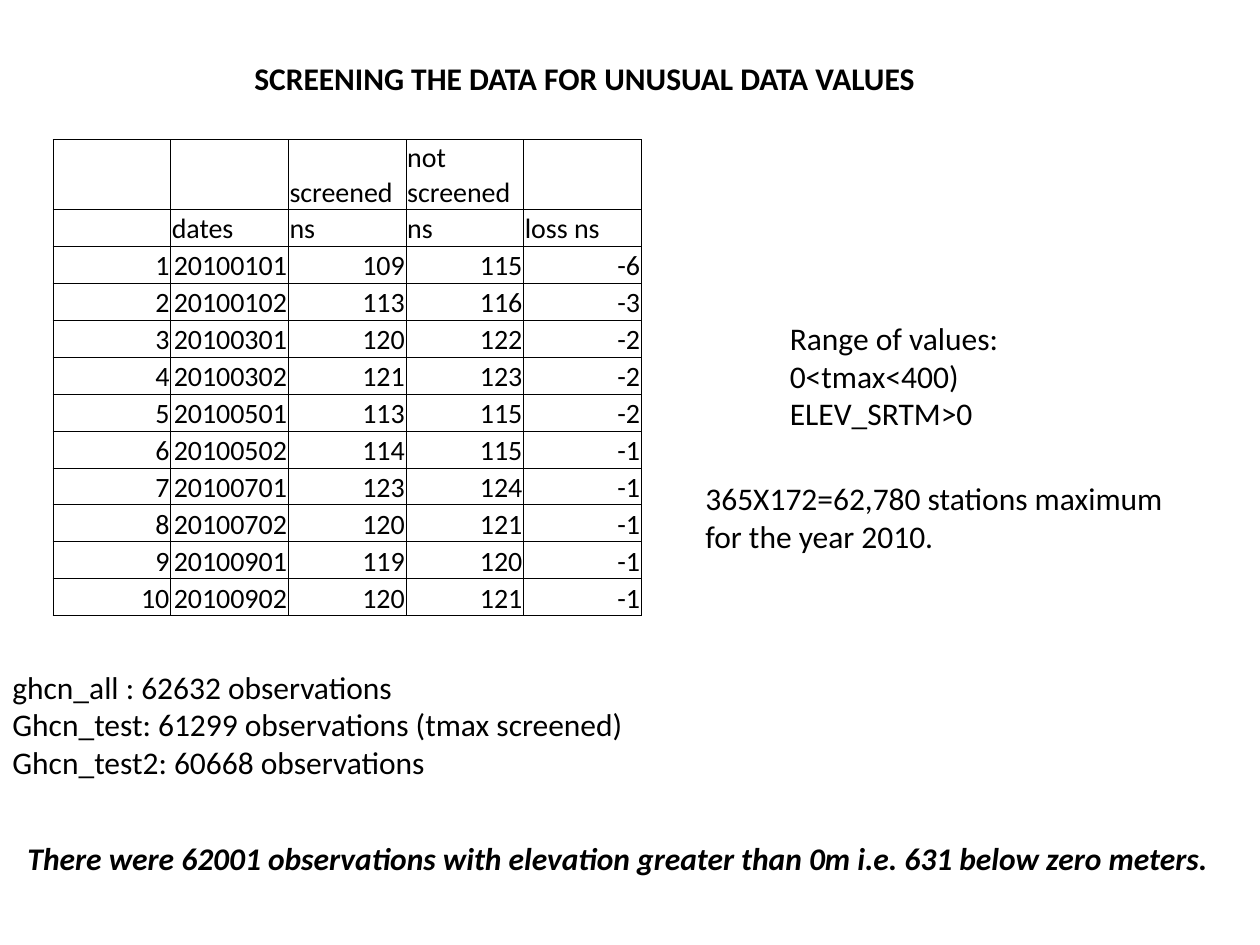
import pptx
import pptx.util
import pptx.dml.color
import pptx.enum.text
import pptx.oxml.ns
import lxml.etree as etree

COLORS = {"text": "000000", "border": "000000"}
FONT = "Calibri"
ANCHOR = pptx.enum.text.MSO_ANCHOR
ALIGN = pptx.enum.text.PP_ALIGN
qn = pptx.oxml.ns.qn

prs = pptx.Presentation()
prs.slide_width = pptx.util.Inches(10)
prs.slide_height = pptx.util.Inches(7.5)
W, H = prs.slide_width, prs.slide_height
s = prs.slides.add_slide(prs.slide_layouts[6])


def write(tf, text, size=18, bold=False, italic=False, align=ALIGN.LEFT):
    tf.word_wrap = True
    for i, line in enumerate(text.split("\n")):
        p = tf.paragraphs[0] if i == 0 else tf.add_paragraph()
        p.alignment = align
        if not line:
            etree.SubElement(p._p, qn("a:endParaRPr"), sz=str(size * 100))
            continue
        r = p.add_run()
        r.text = line
        r.font.name = FONT
        r.font.size = pptx.util.Pt(size)
        r.font.bold = bold
        r.font.italic = italic
        r.font.color.rgb = pptx.dml.color.RGBColor.from_string(COLORS["text"])


def outline(cell):
    tcPr = cell._tc.get_or_add_tcPr()
    for i, side in enumerate(("lnL", "lnR", "lnT", "lnB")):
        ln = etree.Element(qn(f"a:{side}"), w=str(pptx.util.Pt(0.5)))
        fill = etree.SubElement(ln, qn("a:solidFill"))
        etree.SubElement(fill, qn("a:srgbClr"), val=COLORS["border"])
        tcPr.insert(i, ln)


counts = [
    ("20100101", 109, 115),
    ("20100102", 113, 116),
    ("20100301", 120, 122),
    ("20100302", 121, 123),
    ("20100501", 113, 115),
    ("20100502", 114, 115),
    ("20100701", 123, 124),
    ("20100702", 120, 121),
    ("20100901", 119, 120),
    ("20100902", 120, 121),
]
headers = [("", "", "screened", "not screened", ""),
           ("", "dates", "ns", "ns", "loss ns")]
rows = headers + [(n, date, kept, total, kept - total)
                  for n, (date, kept, total) in enumerate(counts, 1)]

table_w, table_h = int(0.467 * W), int(0.501 * H)
head_h = int(0.071 * H)
table = s.shapes.add_table(len(rows), len(rows[0]), int(0.042 * W),
                           int(0.148 * H), table_w, table_h).table
table.first_row = False
table.horz_banding = False
for col in table.columns:
    col.width = table_w // len(rows[0])
for i, row in enumerate(table.rows):
    row.height = head_h if i == 0 else (table_h - head_h) // (len(rows) - 1)

for i, values in enumerate(rows):
    for j, value in enumerate(values):
        cell = table.cell(i, j)
        cell.fill.background()
        cell.vertical_anchor = ANCHOR.BOTTOM
        cell.margin_left = cell.margin_right = pptx.util.Inches(0.01)
        cell.margin_top = pptx.util.Inches(0.01)
        cell.margin_bottom = 0
        align = ALIGN.LEFT if i < len(headers) else ALIGN.RIGHT
        write(cell.text_frame, str(value), size=16, align=align)
        outline(cell)

notes = [
    (0.192, 0.056, 0.65, 0.054, ANCHOR.TOP, {"bold": True},
     "SCREENING THE DATA FOR UNUSUAL DATA VALUES"),
    (0.617, 0.289, 0.2, 0.175, ANCHOR.BOTTOM, {},
     "Range of values:\n0<tmax<400)\nELEV_SRTM>0"),
    (0, 0.7, 0.517, 0.175, ANCHOR.TOP, {},
     "ghcn_all : 62632 observations\n"
     "Ghcn_test: 61299 observations (tmax screened)\n"
     "Ghcn_test2: 60668 observations"),
    (0.55, 0.5, 0.408, 0.094, ANCHOR.TOP, {},
     "365X172=62,780 stations maximum for the year 2010."),
    (0.012, 0.881, 0.966, 0.054, ANCHOR.TOP, {"bold": True, "italic": True},
     "There were 62001 observations with elevation greater than 0m "
     "i.e. 631 below zero meters."),
]
for x, y, w, h, anchor, style, text in notes:
    sp = s.shapes.add_textbox(int(x * W), int(y * H), int(w * W), int(h * H))
    sp.text_frame.vertical_anchor = anchor
    write(sp.text_frame, text, **style)

prs.save("out.pptx")
